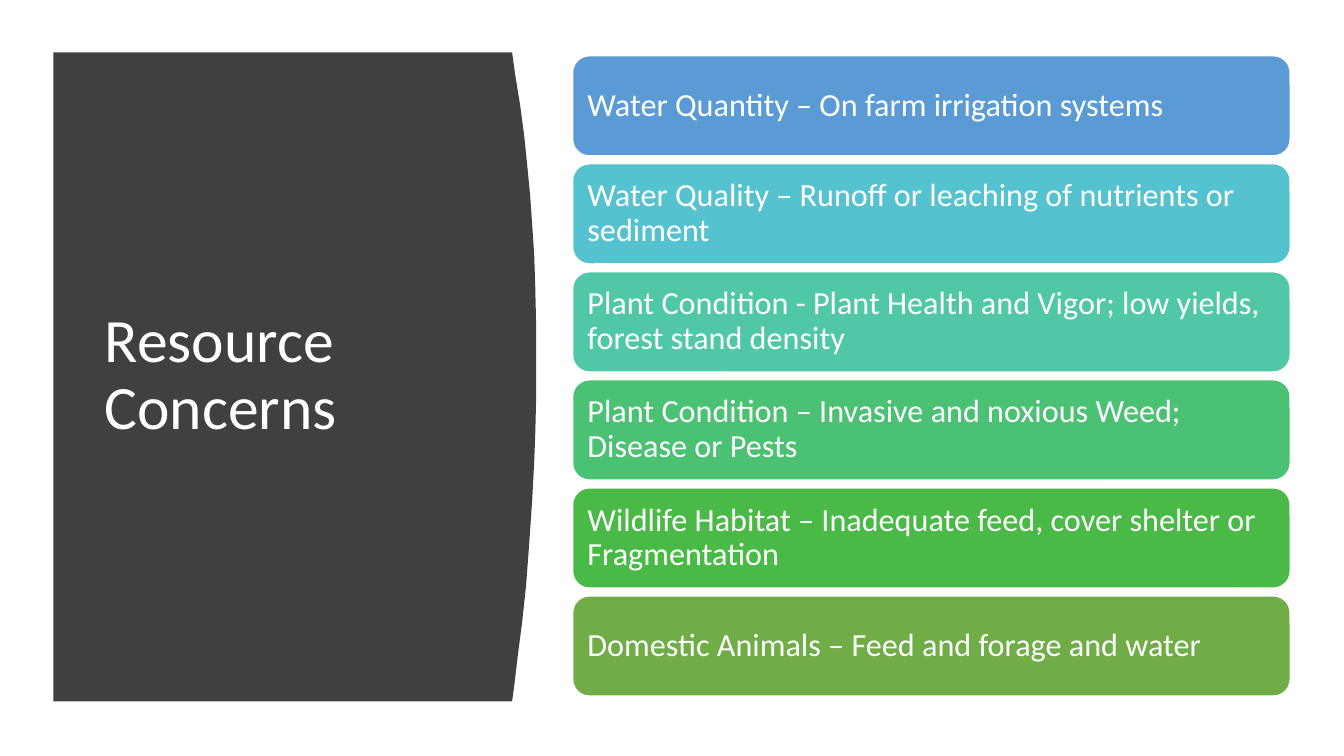
"""Build the Resource Concerns slide."""
from dataclasses import dataclass

from pptx import Presentation
from pptx.dml.color import RGBColor
from pptx.enum.shapes import MSO_SHAPE as Shape
from pptx.enum.text import MSO_ANCHOR as Anchor, PP_ALIGN as Align
from pptx.slide import Slide
from pptx.text.text import TextFrame
from pptx.util import Pt


@dataclass(frozen=True)
class Theme:
    font: str = "Calibri"
    title_size: float = 44
    concern_size: float = 23
    light: str = "FFFFFF"
    panel: str = "404040"


@dataclass(frozen=True)
class Concern:
    text: str
    colour: str


THEME = Theme()
CONCERNS = [
    Concern("Water Quantity – On farm irrigation systems", "5B9BD5"),
    Concern("Water Quality – Runoff or leaching of nutrients or sediment", "55C3CF"),
    Concern("Plant Condition - Plant Health and Vigor; low yields, forest stand density", "50C8A7"),
    Concern("Plant Condition – Invasive and noxious Weed; Disease or Pests", "4BC174"),
    Concern("Wildlife Habitat – Inadequate feed, cover shelter or Fragmentation", "4ABA46"),
    Concern("Domestic Animals – Feed and forage and water", "70AD47"),
]
PANEL_LEFT = 38.2
PANEL_EDGE = [
    (365.8, 37.4), (368, 53.3), (371.5, 74.9), (374.4, 96.5), (376.6, 118.1),
    (378.7, 139.7), (380.2, 161.3), (381.6, 182.2), (382.3, 203), (383, 234),
    (383, 283.7), (382.3, 311.8), (381.6, 329.8), (380.2, 356.4), (378, 388.8),
    (375.8, 418.3), (373, 444.2), (370.1, 466.6), (367.2, 491), (365.8, 501.1),
]
ROW_LEFT, ROW_TOP, ROW_WIDTH, ROW_HEIGHT, ROW_GAP = 409, 39.8, 512.6, 71.6, 5.57


def write(frame: TextFrame, text: str, size: float) -> None:
    """Fill a frame with one vertically centred, left-aligned paragraph."""
    frame.word_wrap = True
    frame.vertical_anchor = Anchor.MIDDLE
    paragraph = frame.paragraphs[0]
    paragraph.text = text
    paragraph.alignment = Align.LEFT
    paragraph.line_spacing = 0.9
    paragraph.font.name = THEME.font
    paragraph.font.size = Pt(size)
    paragraph.font.color.rgb = RGBColor.from_string(THEME.light)


def draw_panel(slide: Slide) -> None:
    """Draw the dark panel with its bowed right edge."""
    top, bottom = PANEL_EDGE[0][1], PANEL_EDGE[-1][1]
    outline = slide.shapes.build_freeform(Pt(PANEL_LEFT), Pt(top))
    corners = [*PANEL_EDGE, (PANEL_LEFT, bottom)]
    outline.add_line_segments([(Pt(x), Pt(y)) for x, y in corners], close=True)
    panel = outline.convert_to_shape()
    panel.shadow.inherit = False
    panel.fill.solid()
    panel.fill.fore_color.rgb = RGBColor.from_string(THEME.panel)
    panel.line.fill.background()


def draw_title(slide: Slide) -> None:
    """Write the title over the panel."""
    title = slide.shapes.add_textbox(Pt(67.7), Pt(80), Pt(269.3), Pt(377.3))
    write(title.text_frame, "Resource Concerns", THEME.title_size)


def draw_concern(slide: Slide, concern: Concern, top: float) -> None:
    """Draw one rounded bar with its text."""
    bar = slide.shapes.add_shape(
        Shape.ROUNDED_RECTANGLE, Pt(ROW_LEFT), Pt(top), Pt(ROW_WIDTH), Pt(ROW_HEIGHT)
    )
    bar.shadow.inherit = False
    bar.fill.solid()
    bar.fill.fore_color.rgb = RGBColor.from_string(concern.colour)
    bar.line.color.rgb = RGBColor.from_string(THEME.light)
    bar.line.width = Pt(1)
    write(bar.text_frame, concern.text, THEME.concern_size)


def main() -> None:
    """Compose and save the slide."""
    deck = Presentation()
    deck.slide_width, deck.slide_height = Pt(960), Pt(540)
    slide = deck.slides.add_slide(deck.slide_layouts[6])
    draw_panel(slide)
    draw_title(slide)
    for row, concern in enumerate(CONCERNS):
        draw_concern(slide, concern, ROW_TOP + row * (ROW_HEIGHT + ROW_GAP))
    deck.save("out.pptx")


if __name__ == "__main__":
    main()
